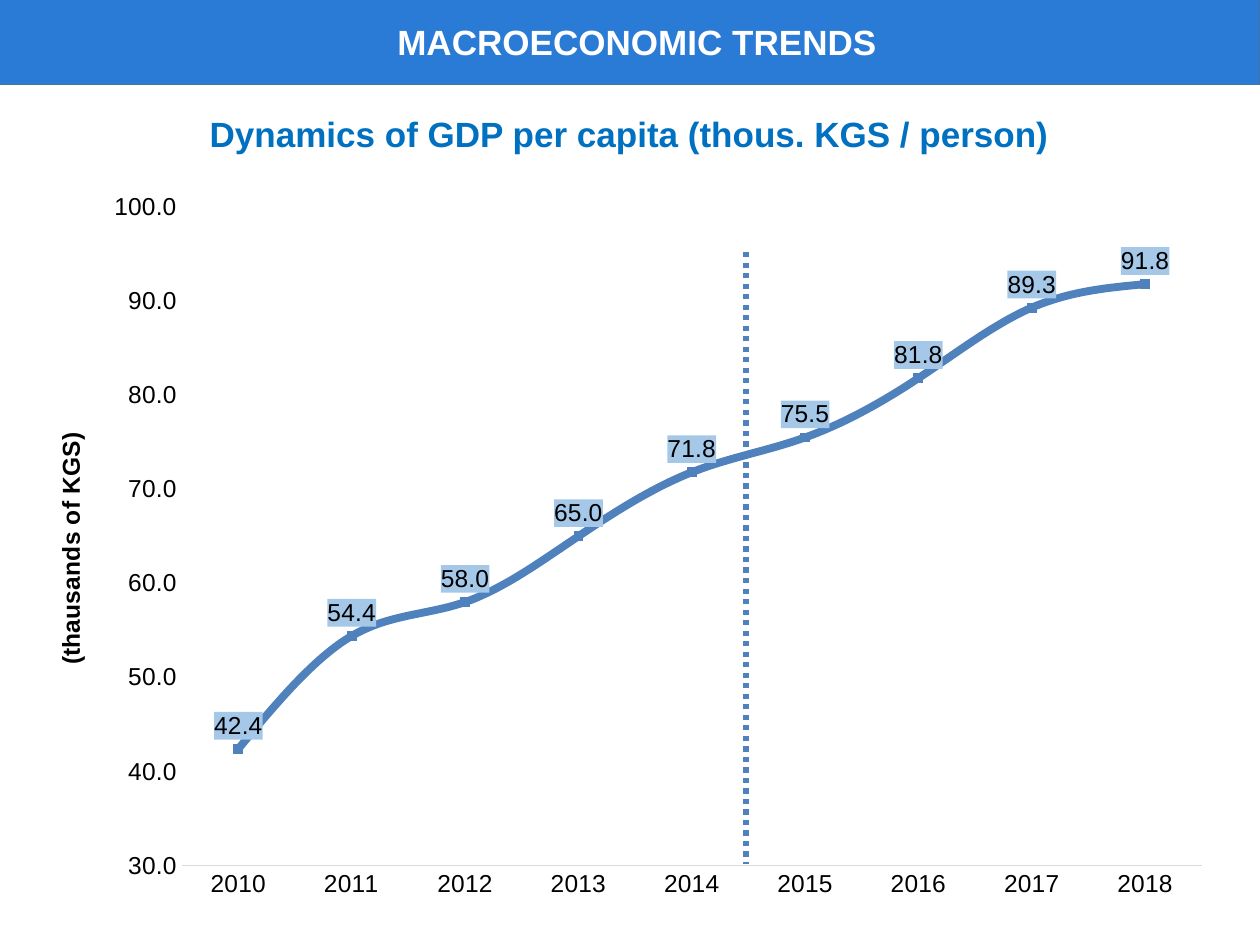
from lxml.etree import SubElement
from pptx import Presentation
from pptx.chart.data import CategoryChartData
from pptx.dml.color import RGBColor
from pptx.enum.chart import XL_CHART_TYPE, XL_LABEL_POSITION, XL_MARKER_STYLE, XL_TICK_MARK
from pptx.enum.dml import MSO_LINE
from pptx.enum.shapes import MSO_CONNECTOR, MSO_SHAPE
from pptx.enum.text import MSO_ANCHOR, PP_ALIGN
from pptx.oxml import parse_xml
from pptx.oxml.ns import nsdecls, qn
from pptx.util import Inches, Pt

WHITE = RGBColor(0xFF, 0xFF, 0xFF)
BLACK = RGBColor(0, 0, 0)
BANNER_BLUE = RGBColor(0x2A, 0x7B, 0xD5)
BANNER_EDGE = RGBColor(0x43, 0x73, 0x9E)
HEADING_BLUE = RGBColor(0x00, 0x70, 0xC0)
SERIES_BLUE = RGBColor(0x4F, 0x81, 0xBD)
LABEL_BLUE = RGBColor(0xA5, 0xC8, 0xE8)
AXIS_GRAY = RGBColor(0xD9, 0xD9, 0xD9)
FONT = "Arial"

YEARS = [str(year) for year in range(2010, 2019)]
GDP_PER_CAPITA = [42.4, 54.4, 58.0, 65.0, 71.8, 75.5, 81.8, 89.3, 91.8]


def style_font(font, size, color, bold=False):
    """Apply the slide typeface with a size, colour and weight."""
    font.name = FONT
    font.size = Pt(size)
    font.bold = bold
    font.color.rgb = color


def write_text(frame, text, *, size=20, color=BLACK, bold=True, align=PP_ALIGN.CENTER):
    """Fill a text frame with one formatted paragraph."""
    frame.word_wrap = True
    frame.vertical_anchor = MSO_ANCHOR.MIDDLE
    paragraph = frame.paragraphs[0]
    paragraph.alignment = align
    run = paragraph.add_run()
    run.text = text
    style_font(run.font, size, color, bold)


def add_banner(slide):
    """Draw the blue banner behind the slide title."""
    banner = slide.shapes.add_shape(
        MSO_SHAPE.RECTANGLE, Inches(-0.01), Inches(-0.01), Inches(10.01), Inches(0.68))
    banner.shadow.inherit = False
    banner.fill.solid()
    banner.fill.fore_color.rgb = BANNER_BLUE
    banner.line.color.rgb = BANNER_EDGE
    banner.line.width = Pt(1)
    title = slide.shapes.title
    title._element.addprevious(banner._element)
    title.left, title.top = Inches(0.84), Inches(0.11)
    title.width, title.height = Inches(8.43), Inches(0.44)
    write_text(title.text_frame, "MACROECONOMIC TRENDS", color=WHITE)


def add_heading(slide):
    """Add the heading above the chart."""
    heading = slide.shapes.add_textbox(Inches(0.26), Inches(0.84), Inches(9.47), Inches(0.44))
    write_text(heading.text_frame, "Dynamics of GDP per capita (thous. KGS / person)",
               color=HEADING_BLUE)


def set_layout(parent, after, **settings):
    """Place a chart part by hand, as fractions of the chart."""
    for old in parent.findall(qn("c:layout")):
        parent.remove(old)
    layout = parse_xml(f"<c:layout {nsdecls('c')}><c:manualLayout/></c:layout>")
    for tag, value in settings.items():
        SubElement(layout[0], qn(f"c:{tag}")).set("val", str(value))
    if after is None:
        parent.insert(0, layout)
    else:
        after.addnext(layout)


def format_axes(chart):
    """Format the year axis and the value axis with its title."""
    years, values = chart.category_axis, chart.value_axis
    for axis in (years, values):
        axis.major_tick_mark = axis.minor_tick_mark = XL_TICK_MARK.NONE
        axis.has_major_gridlines = False
    years.format.line.color.rgb = AXIS_GRAY
    years.format.line.width = Pt(0.75)
    values.format.line.fill.background()
    values.minimum_scale, values.maximum_scale, values.major_unit = 30, 100, 10
    values.tick_labels.number_format = r"#\ ##0.0"
    values.tick_labels.number_format_is_linked = False
    axis_title = values.axis_title
    write_text(axis_title.text_frame, "(thausands of KGS)", size=14)
    title_xml = axis_title._element
    title_xml.find(".//" + qn("a:bodyPr")).set("rot", "-5400000")
    set_layout(title_xml, title_xml.find(qn("c:tx")),
               xMode="edge", yMode="edge", x=0.025, y=0.34)


def format_series(series):
    """Format the GDP line, its markers and its value labels."""
    series.smooth = True
    series.format.line.color.rgb = SERIES_BLUE
    series.format.line.width = Pt(4.5)
    marker = series.marker
    marker.style = XL_MARKER_STYLE.SQUARE
    marker.size = 5
    marker.format.fill.solid()
    marker.format.fill.fore_color.rgb = SERIES_BLUE
    marker.format.line.color.rgb = SERIES_BLUE
    labels = series.data_labels
    labels.show_value = True
    labels.position = XL_LABEL_POSITION.ABOVE
    labels.number_format = "#,##0.0"
    labels.number_format_is_linked = False
    style_font(labels.font, 14, BLACK)
    labels._element.find(qn("c:numFmt")).addnext(parse_xml(
        f'<c:spPr {nsdecls("c", "a")}><a:solidFill><a:srgbClr val="{LABEL_BLUE}"/>'
        "</a:solidFill></c:spPr>"))


def add_gdp_chart(slide):
    """Add the line chart of GDP per capita."""
    gdp = CategoryChartData()
    gdp.categories = YEARS
    gdp.add_series("Series 1", GDP_PER_CAPITA)
    chart = slide.shapes.add_chart(
        XL_CHART_TYPE.LINE_MARKERS, Inches(0.16), Inches(1.41),
        Inches(9.57), Inches(5.84), gdp).chart
    chart.has_title = chart.has_legend = False
    style_font(chart.font, 14, BLACK)
    chart.plots[0].vary_by_categories = False
    format_axes(chart)
    format_series(chart.plots[0].series[0])
    set_layout(chart._chartSpace.find(".//" + qn("c:plotArea")), None,
               layoutTarget="inner", xMode="edge", yMode="edge",
               x=0.134, y=0.04, w=0.846, h=0.895)


def add_period_divider(slide):
    """Draw the dotted line between 2014 and 2015."""
    divider = slide.shapes.add_connector(
        MSO_CONNECTOR.STRAIGHT, Inches(5.92), Inches(2), Inches(5.92), Inches(6.86))
    divider.line.color.rgb = SERIES_BLUE
    divider.line.width = Pt(3)
    divider.line.dash_style = MSO_LINE.ROUND_DOT
    SubElement(divider._element.spPr, qn("a:effectLst"))


def main():
    """Build and save the slide."""
    deck = Presentation()
    deck.slide_width, deck.slide_height = Inches(10), Inches(7.5)
    slide = deck.slides.add_slide(deck.slide_layouts[5])
    add_banner(slide)
    add_heading(slide)
    add_gdp_chart(slide)
    add_period_divider(slide)
    deck.save("out.pptx")


if __name__ == "__main__":
    main()
